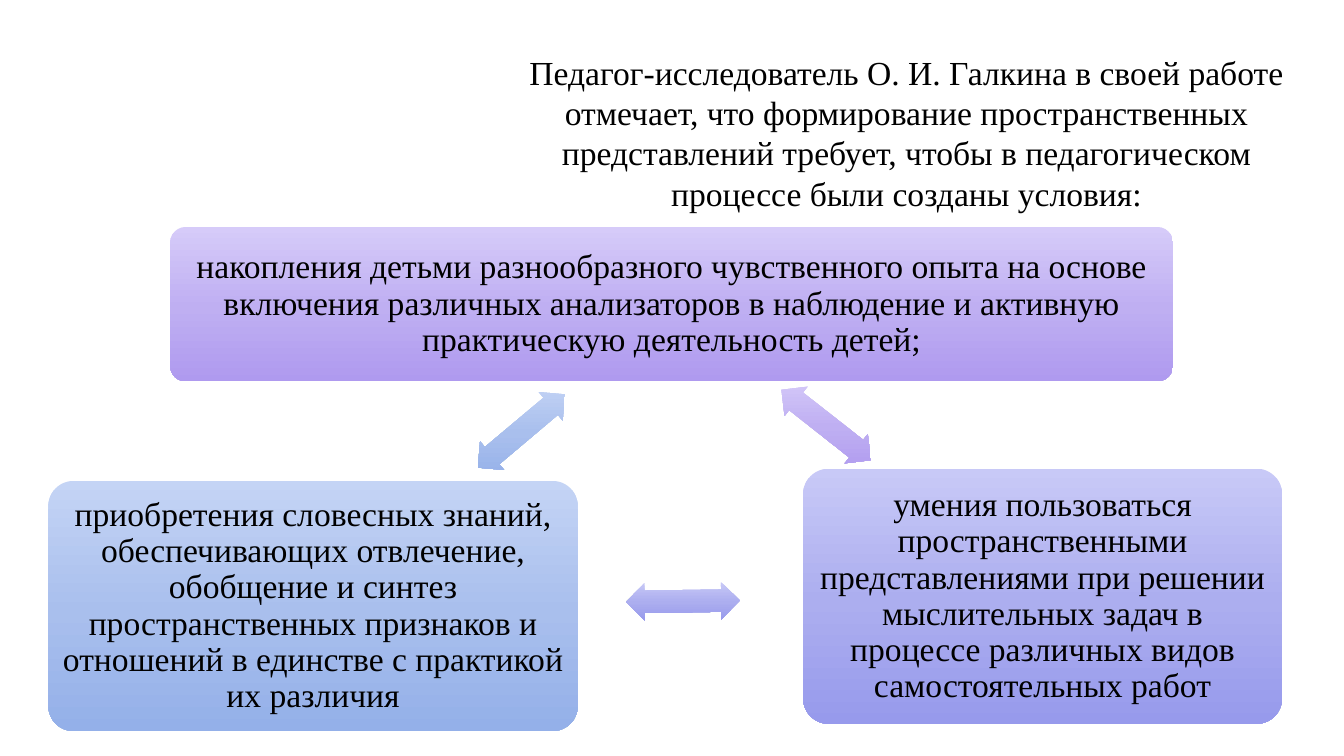
from copy import deepcopy
from dataclasses import dataclass

from pptx import Presentation
from pptx.dml.color import RGBColor
from pptx.enum.shapes import MSO_SHAPE
from pptx.enum.text import MSO_ANCHOR, PP_ALIGN
from pptx.oxml.ns import qn
from pptx.util import Cm, Pt

ROUNDED = MSO_SHAPE.ROUNDED_RECTANGLE
DOUBLE_ARROW = MSO_SHAPE.LEFT_RIGHT_ARROW
TOP, MIDDLE = MSO_ANCHOR.TOP, MSO_ANCHOR.MIDDLE
CENTER = PP_ALIGN.CENTER
TITLE_ONLY = 5


@dataclass(frozen=True)
class Theme:
    font: str = "Times New Roman"
    size: int = 24
    text: str = "000000"
    violet: tuple = ("D6CBF9", "BFAFF2", "AF9AEF")
    indigo: tuple = ("C8C9F7", "ACAEEF", "979AEC")
    blue: tuple = ("C4D4F5", "A9BFED", "94B0E9")
    stops: tuple = (0, 0.52, 1)


THEME = Theme()

INTRO = (
    "Педагог-исследователь О. И. Галкина в своей работе отмечает, что "
    "формирование пространственных представлений требует, чтобы в "
    "педагогическом процессе были созданы условия:"
)
INTRO_BOX = (13.03, 1.17, 19.63, 4.37)

# Text, colours, box (left, top, width, height in cm)
CONDITIONS = [
    ("накопления детьми разнообразного чувственного опыта на основе включения "
     "различных анализаторов в наблюдение и активную практическую деятельность "
     "детей;",
     THEME.violet, (4.29, 5.72, 25.27, 3.89)),
    ("умения пользоваться пространственными представлениями при решении "
     "мыслительных задач в процессе различных видов самостоятельных работ",
     THEME.indigo, (20.24, 11.81, 12.07, 6.43)),
    ("приобретения словесных знаний, обеспечивающих отвлечение, обобщение и "
     "синтез пространственных признаков и отношений в единстве с практикой "
     "их различия",
     THEME.blue, (1.22, 12.12, 13.34, 6.3)),
]

# Colours, centre (x, y in cm), rotation in degrees
LINKS = [
    (THEME.violet, (20.82, 10.71), 38.2),
    (THEME.indigo, (17.21, 15.15), -0.8),
    (THEME.blue, (13.14, 10.86), -40.1),
]
LINK_WIDTH, LINK_HEIGHT = 2.87, 0.94


def write_centred(frame, wording, anchor, line_spacing):
    frame.text = wording
    frame.word_wrap = True
    frame.vertical_anchor = anchor
    paragraph = frame.paragraphs[0]
    paragraph.alignment = CENTER
    paragraph.line_spacing = line_spacing
    font = paragraph.runs[0].font
    font.name = THEME.font
    font.size = Pt(THEME.size)
    font.color.rgb = RGBColor.from_string(THEME.text)


def shade(shape, colours):
    """Fill from top to bottom with three colours, whatever the rotation."""
    shape.shadow.inherit = False
    shape.line.fill.background()
    fill = shape.fill
    fill.gradient()
    fill.gradient_angle = 270
    gradient = shape._element.spPr.find(qn("a:gradFill"))
    gradient.set("rotWithShape", "0")
    first_stop = gradient.find(qn("a:gsLst"))[0]
    first_stop.addnext(deepcopy(first_stop))
    for stop, position, colour in zip(fill.gradient_stops, THEME.stops, colours):
        stop.position = position
        stop.color.rgb = RGBColor.from_string(colour)


def add_intro(slide, box):
    intro = slide.shapes.title
    intro.left, intro.top, intro.width, intro.height = map(Cm, box)
    write_centred(intro.text_frame, INTRO, TOP, 1.0)


def add_condition(slide, wording, colours, box):
    condition = slide.shapes.add_shape(ROUNDED, *map(Cm, box))
    condition.adjustments[0] = 0.1
    shade(condition, colours)
    frame = condition.text_frame
    # The rounded outline already insets its text by 0.29 of the corner radius.
    corner_inset = 0.29 * 0.1 * min(box[2:])
    margin = Cm(round(0.25 - corner_inset, 2))
    frame.margin_left = frame.margin_right = margin
    frame.margin_top = frame.margin_bottom = margin
    write_centred(frame, wording, MIDDLE, 0.9)


def add_link(slide, colours, centre, rotation):
    x, y = centre
    link = slide.shapes.add_shape(
        DOUBLE_ARROW, Cm(x - LINK_WIDTH / 2), Cm(y - LINK_HEIGHT / 2),
        Cm(LINK_WIDTH), Cm(LINK_HEIGHT))
    link.adjustments[0] = 0.6
    link.adjustments[1] = 0.5
    link.rotation = rotation
    shade(link, colours)


def main():
    deck = Presentation()
    deck.slide_width, deck.slide_height = Cm(33.87), Cm(19.05)
    slide = deck.slides.add_slide(deck.slide_layouts[TITLE_ONLY])
    add_intro(slide, INTRO_BOX)
    for condition in CONDITIONS:
        add_condition(slide, *condition)
    for link in LINKS:
        add_link(slide, *link)
    deck.save("out.pptx")


if __name__ == "__main__":
    main()
